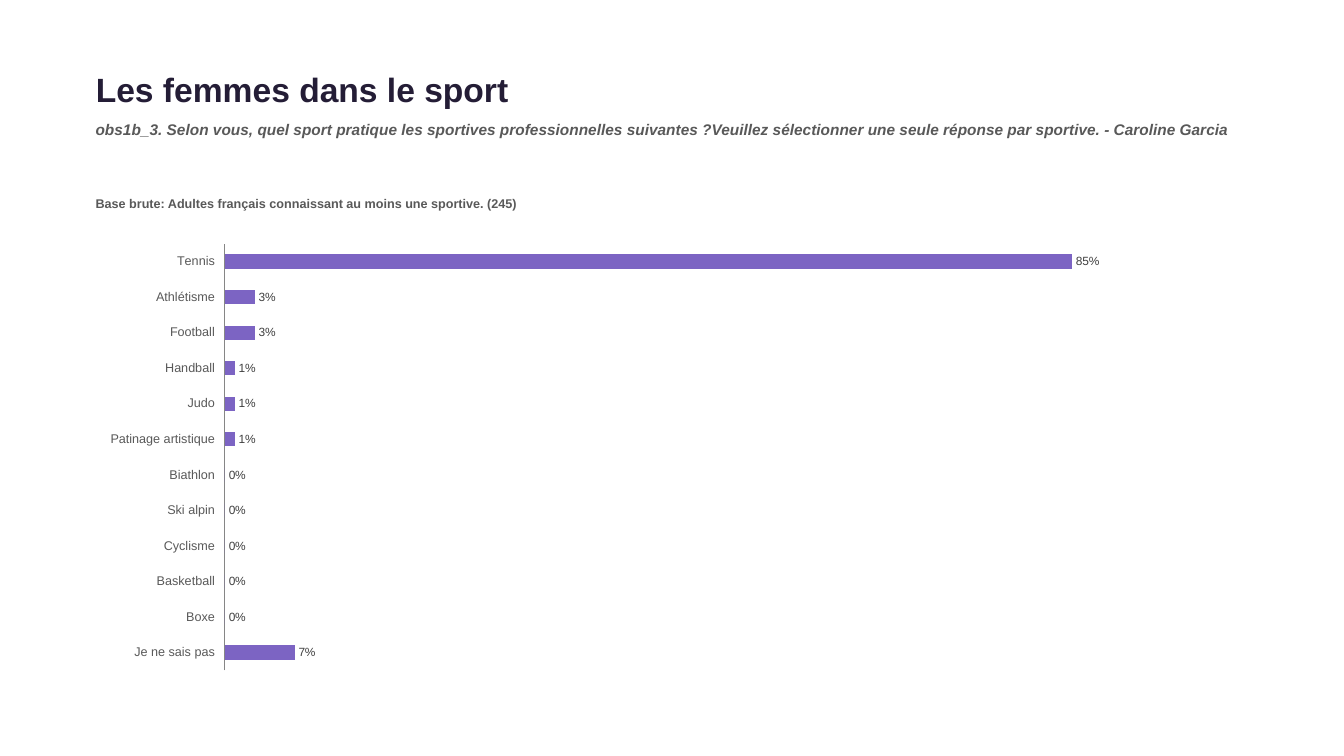
"""Build the survey slide on women in sport."""
from dataclasses import dataclass

import lxml.etree
import pptx
import pptx.chart.data
import pptx.dml.color
import pptx.enum.chart
import pptx.enum.text
import pptx.oxml.ns
import pptx.util
from pptx.util import Cm


@dataclass(frozen=True)
class Theme:
    """Colours, type sizes and font of the slide."""
    font: str = "Arial"
    title: str = "241D36"
    text: str = "595959"
    label: str = "404040"
    axis: str = "868686"
    bar: str = "7C64C3"
    title_size: float = 24
    question_size: float = 11
    small_size: float = 9
    label_size: float = 8.5


THEME = Theme()
LEFT, WIDTH = Cm(2.16), Cm(29.54)
SPORTS = [
    ("Je ne sais pas", 0.07), ("Boxe", 0), ("Basketball", 0), ("Cyclisme", 0),
    ("Ski alpin", 0), ("Biathlon", 0), ("Patinage artistique", 0.01),
    ("Judo", 0.01), ("Handball", 0.01), ("Football", 0.03),
    ("Athlétisme", 0.03), ("Tennis", 0.85),
]


def rgb(value):
    """Return the colour for a hex string."""
    return pptx.dml.color.RGBColor.from_string(value)


def style_font(font, size, color, bold=False, italic=False):
    """Apply the theme typeface with the given look."""
    font.name, font.size = THEME.font, pptx.util.Pt(size)
    font.bold, font.italic = bold, italic
    font.color.rgb = rgb(color)


def fill_text(sp, text, size, color, italic=False):
    """Write one bold, left-aligned paragraph into a shape."""
    tf = sp.text_frame
    tf.word_wrap = True
    tf.text = text
    p = tf.paragraphs[0]
    p.alignment = pptx.enum.text.PP_ALIGN.LEFT
    style_font(p.runs[0].font, size, color, bold=True, italic=italic)


def add_title(s, text):
    """Place and format the title placeholder."""
    sp = s.shapes.title
    sp.left, sp.top, sp.width, sp.height = LEFT, Cm(1.6), WIDTH, Cm(1.27)
    fill_text(sp, text, THEME.title_size, THEME.title)
    sp.text_frame.vertical_anchor = pptx.enum.text.MSO_ANCHOR.MIDDLE
    sp.text_frame.auto_size = pptx.enum.text.MSO_AUTO_SIZE.SHAPE_TO_FIT_TEXT


def add_note(s, top, height, text, size, italic=False):
    """Add a full-width line of grey text."""
    sp = s.shapes.add_textbox(LEFT, top, WIDTH, height)
    fill_text(sp, text, size, THEME.text, italic)


def set_plot_area(chart, **fractions):
    """Fix the inner plot area as fractions of the chart."""
    qn = pptx.oxml.ns.qn
    area = chart._chartSpace.chart.plotArea
    for old in area.findall(qn("c:layout")):
        area.remove(old)
    layout = lxml.etree.Element(qn("c:layout"))
    manual = lxml.etree.SubElement(layout, qn("c:manualLayout"))
    settings = {"layoutTarget": "inner", "xMode": "edge", "yMode": "edge", **fractions}
    for tag, value in settings.items():
        lxml.etree.SubElement(manual, qn(f"c:{tag}")).set("val", str(value))
    area.insert(0, layout)


def style_axes(chart):
    """Show sport names on a thin line and hide the percentage axis."""
    sports, shares = chart.category_axis, chart.value_axis
    none = pptx.enum.chart.XL_TICK_MARK.NONE
    sports.major_tick_mark = sports.minor_tick_mark = none
    sports.tick_label_position = pptx.enum.chart.XL_TICK_LABEL_POSITION.LOW
    sports.format.line.color.rgb = rgb(THEME.axis)
    sports.format.line.width = pptx.util.Pt(0.75)
    style_font(sports.tick_labels.font, THEME.small_size, THEME.text)
    shares.minimum_scale, shares.maximum_scale, shares.major_unit = 0, 1, 0.1
    shares.has_major_gridlines = False
    shares.tick_labels.number_format = "0.00%"
    shares.tick_labels.number_format_is_linked = False
    shares.visible = False


def add_bars(s, rows):
    """Add the bar chart of answers by sport."""
    data = pptx.chart.data.CategoryChartData()
    data.categories = [sport for sport, _ in rows]
    data.add_series("Series 1", [share for _, share in rows])
    chart = s.shapes.add_chart(
        pptx.enum.chart.XL_CHART_TYPE.BAR_CLUSTERED,
        LEFT, Cm(5.92), Cm(29.21), Cm(11.2), data).chart
    chart.has_legend = chart.has_title = False
    chart.font.name = THEME.font
    style_axes(chart)
    set_plot_area(chart, x=0.12, y=0.02, w=0.86, h=0.96)
    plot = chart.plots[0]
    plot.gap_width, plot.overlap, plot.vary_by_categories = 150, -10, False
    series = plot.series[0]
    series.format.fill.solid()
    series.format.fill.fore_color.rgb = rgb(THEME.bar)
    labels = series.data_labels
    labels.show_value = True
    labels.number_format, labels.number_format_is_linked = "0%", False
    labels.position = pptx.enum.chart.XL_LABEL_POSITION.OUTSIDE_END
    style_font(labels.font, THEME.label_size, THEME.label)


def main():
    """Build and save the slide."""
    prs = pptx.Presentation()
    prs.slide_width, prs.slide_height = Cm(33.87), Cm(19.05)
    s = prs.slides.add_slide(prs.slide_layouts.get_by_name("Title Only"))
    add_title(s, "Les femmes dans le sport")
    add_note(s, Cm(2.9), Cm(1.9),
             "obs1b_3. Selon vous, quel sport pratique les sportives professionnelles "
             "suivantes ?Veuillez sélectionner une seule réponse par sportive. "
             "- Caroline Garcia", THEME.question_size, italic=True)
    add_note(s, Cm(4.8), Cm(1.12),
             "Base brute: Adultes français connaissant au moins une sportive. (245)",
             THEME.small_size)
    add_bars(s, SPORTS)
    prs.save("out.pptx")


if __name__ == "__main__":
    main()
